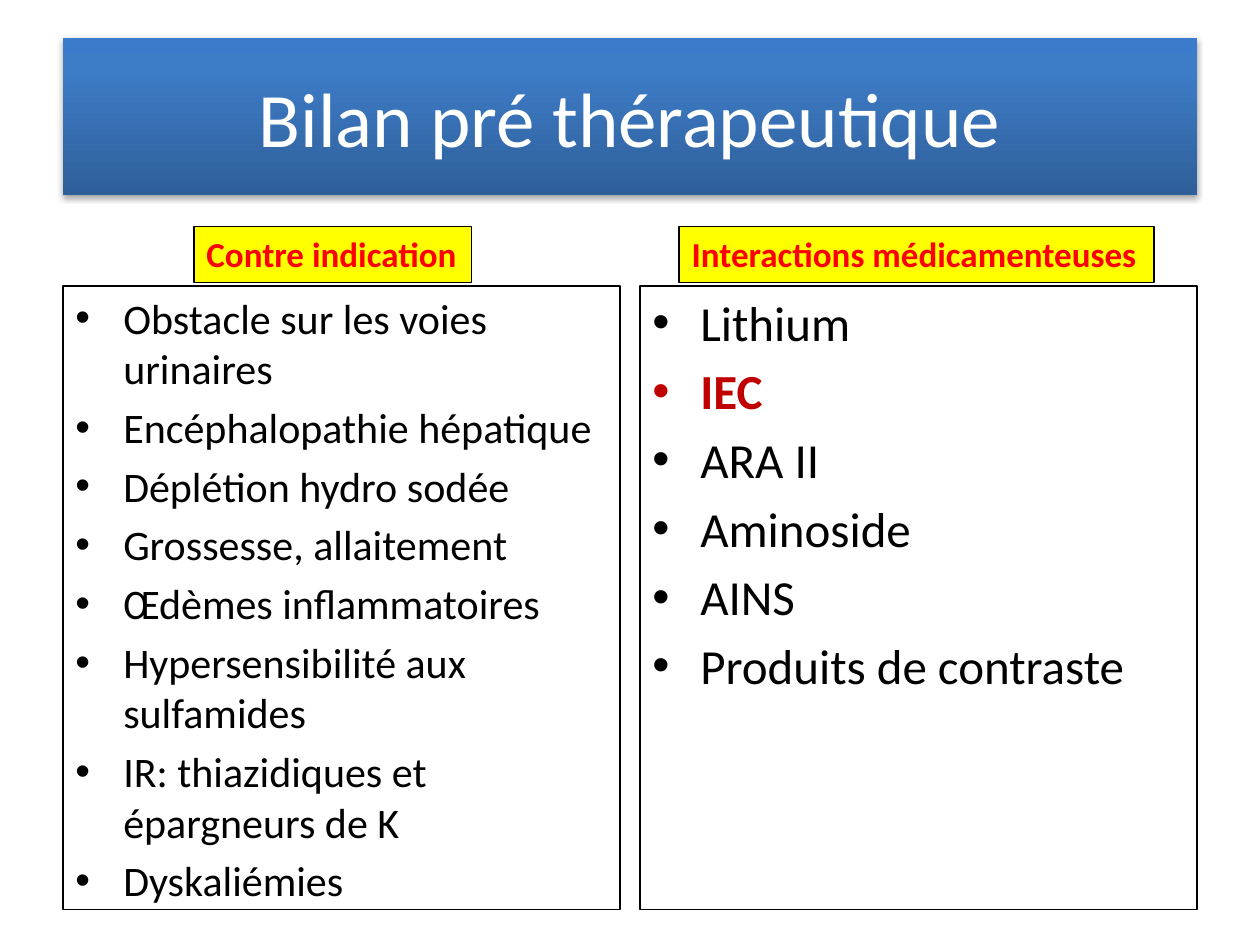
"""Build the 'Bilan pré thérapeutique' slide: a title band over two labelled lists."""
from lxml import etree
from pptx import Presentation
from pptx.dml.color import RGBColor
from pptx.enum.text import MSO_ANCHOR, MSO_AUTO_SIZE, PP_ALIGN
from pptx.oxml.ns import qn
from pptx.util import Inches, Pt

CENTER, LEFT = PP_ALIGN.CENTER, PP_ALIGN.LEFT
MIDDLE, NO_FIT, GROW = MSO_ANCHOR.MIDDLE, MSO_AUTO_SIZE.NONE, MSO_AUTO_SIZE.SHAPE_TO_FIT_TEXT
COLORS = {
    "black": "000000", "white": "FFFFFF", "yellow": "FFFF00", "red": "FF0000",
    "dark_red": "C00000", "band_low": "2F5F99", "band_mid": "3D7CC7", "band_top": "3A7CCB",
}
BAND_STOPS = [(0, "band_low"), (80, "band_mid"), (100, "band_top")]
COLUMNS = [
    (0.5, 24, (1.54, 2.2, "Contre indication"), [
        "Obstacle sur les voies urinaires", "Encéphalopathie hépatique",
        "Déplétion hydro sodée", "Grossesse, allaitement", "Œdèmes inflammatoires",
        "Hypersensibilité aux sulfamides", "IR: thiazidiques et épargneurs de K",
        "Dyskaliémies"]),
    (5.08, 28, (5.39, 3.77, "Interactions médicamenteuses"), [
        "Lithium", "IEC", "ARA II", "Aminoside", "AINS", "Produits de contraste"]),
]
KEY_ITEM = "IEC"


def add_box(left, top, width, height, outlined=True):
    sp = slide.shapes.add_textbox(Inches(left), Inches(top), Inches(width), Inches(height))
    sp.text_frame.word_wrap = True
    sp.text_frame.auto_size = NO_FIT
    if outlined:
        sp.line.color.rgb = RGBColor.from_string(COLORS["black"])
        sp.line.width = Pt(0.75)
    return sp


def add_run(p, text, size, color, bold=False, align=LEFT):
    p.alignment = align
    r = p.add_run()
    r.text = text
    r.font.name = "Calibri"
    r.font.size = Pt(size)
    r.font.bold = bold
    r.font.color.rgb = RGBColor.from_string(COLORS[color])


prs = Presentation()
prs.slide_width, prs.slide_height = Inches(10), Inches(7.5)
slide = prs.slides.add_slide(prs.slide_layouts[6])

title = add_box(0.5, 0.3, 9, 1.25, outlined=False)
title.text_frame.vertical_anchor = MIDDLE
add_run(title.text_frame.paragraphs[0], "Bilan pré thérapeutique", 44, "white", align=CENTER)

title.fill.gradient()
title.fill.gradient_angle = 90
stops = title.element.spPr.find(".//" + qn("a:gsLst"))
for stop in list(stops):
    stops.remove(stop)
for pos, color in BAND_STOPS:
    stop = etree.SubElement(stops, qn("a:gs"), pos=str(pos * 1000))
    etree.SubElement(stop, qn("a:srgbClr"), val=COLORS[color])

title.shadow.inherit = False
effects = title.element.spPr.find(qn("a:effectLst"))
shadow = etree.SubElement(effects, qn("a:outerShdw"), blurRad=str(Pt(3.1)), dist=str(Pt(1.8)),
                          dir="5400000", rotWithShape="0")
shade = etree.SubElement(shadow, qn("a:srgbClr"), val=COLORS["black"])
etree.SubElement(shade, qn("a:alpha"), val="35000")

for left, size, (label_left, label_width, label_text), items in COLUMNS:
    tf = add_box(left, 2.27, 4.42, 4.95).text_frame
    for i, item in enumerate(items):
        p = tf.add_paragraph() if i else tf.paragraphs[0]
        p.space_before = Pt(round(size * 0.2, 1))
        key = item == KEY_ITEM
        add_run(p, item, size, "dark_red" if key else "black", bold=key)
        pPr = p._p.get_or_add_pPr()
        pPr.set("marL", str(Inches(0.38)))
        pPr.set("indent", str(Inches(-0.38)))
        etree.SubElement(pPr, qn("a:buFont"), typeface="Arial")
        etree.SubElement(pPr, qn("a:buChar"), char="•")

    label = add_box(label_left, 1.8, label_width, 0.44)
    label.fill.solid()
    label.fill.fore_color.rgb = RGBColor.from_string(COLORS["yellow"])
    label.text_frame.word_wrap = False
    label.text_frame.auto_size = GROW
    add_run(label.text_frame.paragraphs[0], label_text, 20, "red", bold=True)

prs.save("out.pptx")
